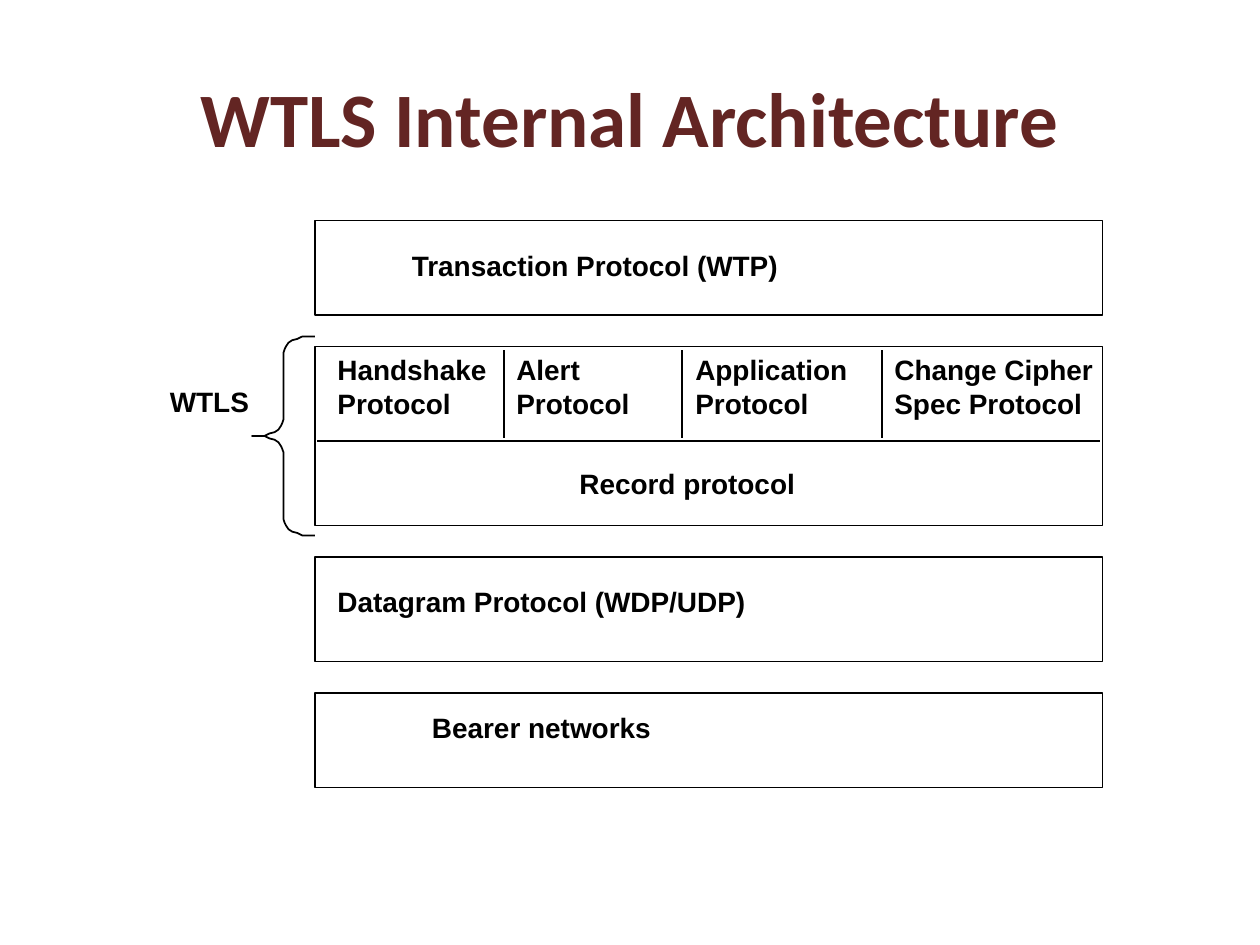
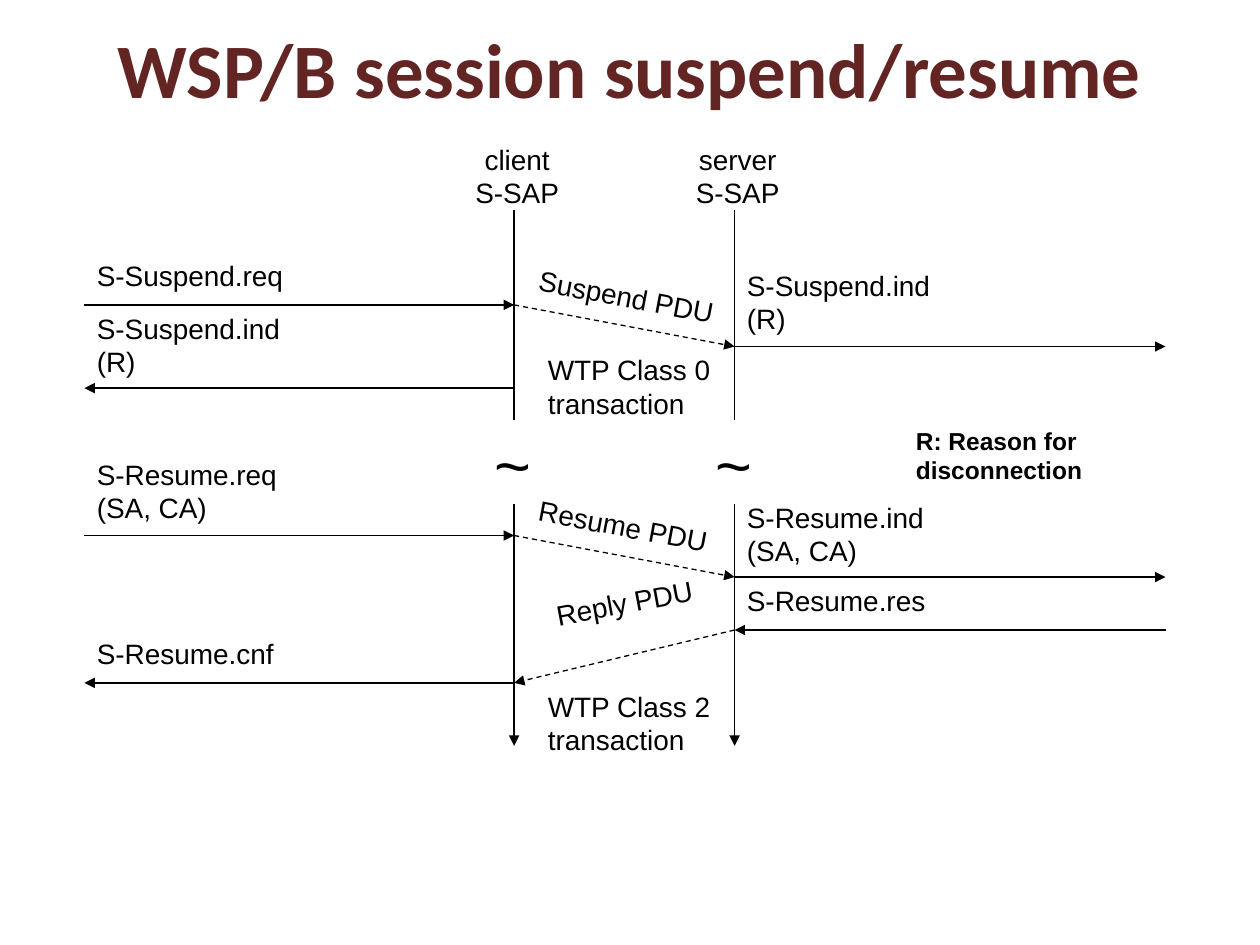
import pptx
import pptx.util
import pptx.dml.color
import pptx.enum.dml
import pptx.enum.shapes
import pptx.enum.text
import pptx.oxml.ns
from lxml import etree

Inches = pptx.util.Inches
Pt = pptx.util.Pt
RGBColor = pptx.dml.color.RGBColor
ALIGN = pptx.enum.text.PP_ALIGN
qn = pptx.oxml.ns.qn

MAROON = RGBColor(0x63, 0x25, 0x23)
BLACK = RGBColor(0, 0, 0)
WHITE = RGBColor(255, 255, 255)

# Protocol stack
STACK_X, STACK_W = 2.5, 6.25

# Sequence chart columns
LEFT, CLIENT, SERVER, RIGHT = 0.67, 4.08, 5.83, 9.25
TILT = 10.6


def add_slide(deck, title, x, y, w, h):
    slide = deck.slides.add_slide(deck.slide_layouts[5])
    head = slide.shapes.title
    head.left, head.top, head.width, head.height = map(Inches, (x, y, w, h))
    head.text_frame.text = title
    head.text_frame.vertical_anchor = pptx.enum.text.MSO_ANCHOR.MIDDLE
    para = head.text_frame.paragraphs[0]
    para.alignment = ALIGN.CENTER
    style(para.font, "Calibri", 44, True, MAROON)
    return slide


def style(font, name, size, bold, color):
    font.name, font.size, font.bold = name, Pt(size), bold
    font.color.rgb = color


def add_text(slide, text, x, y, w, h=0.37, size=16, bold=False,
             wrap=False, align=ALIGN.LEFT, turn=0):
    box = slide.shapes.add_textbox(*map(Inches, (x, y, w, h)))
    box.rotation = turn
    frame = box.text_frame
    frame.text = text
    frame.word_wrap = wrap
    frame.auto_size = pptx.enum.text.MSO_AUTO_SIZE.SHAPE_TO_FIT_TEXT
    for para in frame.paragraphs:
        para.alignment = align
        style(para.font, "Arial", size, bold, BLACK)


def add_label(slide, text, x, y, w, h=0.36):
    add_text(slide, text, x, y, w, h, bold=True, wrap=True)


def add_box(slide, y, h):
    box = slide.shapes.add_shape(
        pptx.enum.shapes.MSO_SHAPE.RECTANGLE,
        *map(Inches, (STACK_X, y, STACK_W, h)))
    box.shadow.inherit = False
    box.fill.solid()
    box.fill.fore_color.rgb = WHITE
    box.line.color.rgb = BLACK
    box.line.width = Pt(1)


def add_line(slide, x1, y1, x2, y2, width=0.75, dash=False, arrow=False):
    link = slide.shapes.add_connector(
        pptx.enum.shapes.MSO_CONNECTOR.STRAIGHT,
        *map(Inches, (x1, y1, x2, y2)))
    link.line.color.rgb = BLACK
    link.line.width = Pt(width)
    if dash:
        link.line.dash_style = pptx.enum.dml.MSO_LINE.DASH
    if arrow:
        etree.SubElement(link.line._get_or_add_ln(), qn("a:tailEnd"),
                         type="triangle")
    etree.SubElement(link._element.spPr, qn("a:effectLst"))


def add_brace(slide):
    # One corner curve, turned for the tip, then mirrored for the lower half
    curve = [(2.5, 2.67), (2.45, 2.67), (2.4, 2.67), (2.36, 2.69),
             (2.32, 2.7), (2.29, 2.72), (2.27, 2.75), (2.26, 2.77),
             (2.25, 2.8)]
    upper = curve + [(4.5 - x, 6.13 - y) for x, y in reversed(curve)]
    lower = [(x, 6.92 - y) for x, y in reversed(upper)]
    dots = [(Inches(x), Inches(y)) for x, y in upper + lower[1:]]
    pen = slide.shapes.build_freeform(*dots[0])
    pen.add_line_segments(dots[1:], close=False)
    brace = pen.convert_to_shape()
    brace.shadow.inherit = False
    brace.fill.background()
    brace.line.color.rgb = BLACK
    brace.line.width = Pt(1)


def draw_stack(deck):
    slide = add_slide(deck, "WTLS Internal Architecture", 0.5, 0.3, 9, 1.25)

    # Layers
    for y, h in ((1.75, 0.75), (2.75, 1.42), (4.42, 0.83), (5.5, 0.75)):
        add_box(slide, y, h)
    add_label(slide, "Transaction Protocol (WTP)", 3.17, 1.92, 5.41)
    add_label(slide, "Datagram Protocol (WDP/UDP)", 2.58, 4.59, 5.92)
    add_label(slide, "Bearer networks", 3.33, 5.59, 4.58)

    # Inside of WTLS
    add_line(slide, 2.52, 3.5, 8.73, 3.5, 1)
    for x in (4, 5.41, 7):
        add_line(slide, x, 2.78, x, 3.48, 1)
    for text, x, w in (("Handshake Protocol", 2.58, 1.41),
                       ("Alert Protocol", 4, 1.33),
                       ("Application Protocol", 5.42, 1.41),
                       ("Change Cipher Spec Protocol", 7, 1.91)):
        add_label(slide, text, x, 2.75, w, 0.63)
    add_text(slide, "Record protocol", 4.5, 3.65, 1.92, bold=True)

    add_brace(slide)
    add_label(slide, "WTLS", 1.25, 3, 1)


def draw_flow(deck):
    slide = add_slide(deck, "WSP/B session suspend/resume",
                      0.75, 0.08, 8.5, 0.92)

    # Lifelines, with a break between the two phases
    for name, x in (("client", CLIENT), ("server", SERVER)):
        add_text(slide, name + "\nS-SAP", x - 0.41, 1.08, 0.87, 0.64,
                 align=ALIGN.CENTER)
        add_line(slide, x, 1.67, x, 3.33)
        add_text(slide, "~", x - 0.25, 3.33, 0.49, 0.7, size=36)
        add_line(slide, x, 4, x, 5.92, arrow=True)

    # Service primitives: text, its top, arrow start, arrow end, arrow height
    for text, top, start, end, y in (
            ("S-Suspend.req", 2, LEFT, CLIENT, 2.42),
            ("S-Suspend.ind\n(R)", 2.08, SERVER, RIGHT, 2.75),
            ("S-Suspend.ind\n(R)", 2.42, CLIENT, LEFT, 3.08),
            ("S-Resume.req\n(SA, CA)", 3.58, LEFT, CLIENT, 4.25),
            ("S-Resume.ind\n(SA, CA)", 3.92, SERVER, RIGHT, 4.58),
            ("S-Resume.res", 4.58, RIGHT, SERVER, 5),
            ("S-Resume.cnf", 5, CLIENT, LEFT, 5.42)):
        add_text(slide, text, min(start, end), top, 1.8,
                 0.64 if "\n" in text else 0.37)
        add_line(slide, start, y, end, y, arrow=True)

    # PDUs between client and server
    for text, x, y, w, turn, ends in (
            ("Suspend PDU", 4.17, 2.17, 1.61, TILT,
             (CLIENT, 2.42, SERVER, 2.75)),
            ("Resume PDU", 4.17, 3.99, 1.56, TILT,
             (CLIENT, 4.25, SERVER, 4.58)),
            ("Reply PDU", 4.31, 4.6, 1.3, -TILT,
             (SERVER, 5, CLIENT, 5.42))):
        add_text(slide, text, x, y, w, turn=turn)
        add_line(slide, *ends, dash=True, arrow=True)

    # Transaction classes and key
    for kind, y in ((0, 2.75), (2, 5.42)):
        add_text(slide, f"WTP Class {kind}\ntransaction", 4.25, y, 1.5, 0.64)
    add_text(slide, "R: Reason for disconnection", 7.17, 3.33, 2.58, 0.33,
             size=14, bold=True, wrap=True)


def main():
    deck = pptx.Presentation()
    deck.slide_width, deck.slide_height = Inches(10), Inches(7.5)
    draw_stack(deck)
    draw_flow(deck)
    deck.save("out.pptx")


if __name__ == "__main__":
    main()
